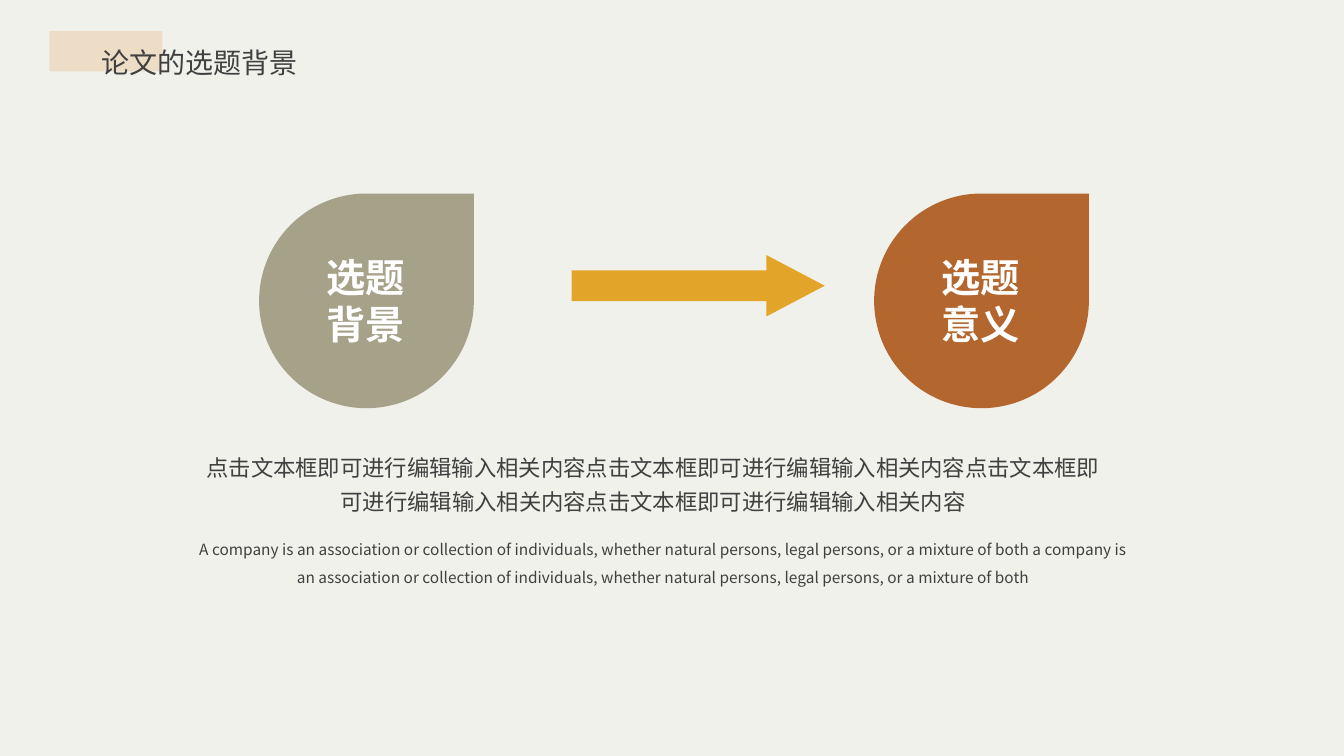
from lxml.etree import SubElement
from pptx import Presentation
from pptx.dml.color import RGBColor
from pptx.enum.shapes import MSO_SHAPE as Shape
from pptx.enum.text import MSO_ANCHOR as Anchor, PP_ALIGN as Align
from pptx.oxml.ns import qn
from pptx.util import Inches, Pt

TITLE = "论文的选题背景"
# lines, left edge, fill colour, opacity in percent
DROPS = [
    (["选题", "背景"], 2.57, "olive", 85),
    (["选题", "意义"], 8.67, "rust", 100),
]
CHINESE = "点击文本框即可进行编辑输入相关内容" * 4
PHRASE = ("company is an association or collection of individuals, "
          "whether natural persons, legal persons, or a mixture of both")
ENGLISH = f"A {PHRASE} a {PHRASE}"

THEME = {
    "font": "Noto Sans CJK SC",
    "colors": {
        "paper": "F1F1EB", "sand": "EDDDC6", "olive": "9A9479", "rust": "B3672E",
        "gold": "E2A52A", "ink": "404040", "white": "FFFFFF",
    },
    "sizes": {"title": 20, "drop": 28, "body": 16, "small": 11},
}
DROP_TOP, DROP_SIZE = 1.92, 2.13
LABEL_WIDTH, LABEL_HEIGHT = 0.99, 1.04


def color(name):
    return RGBColor.from_string(THEME["colors"][name])


def add_figure(page, kind, left, top, width, height, fill, opacity=100):
    figure = page.shapes.add_shape(
        kind, Inches(left), Inches(top), Inches(width), Inches(height))
    figure.shadow.inherit = False
    figure.line.fill.background()
    figure.fill.solid()
    figure.fill.fore_color.rgb = color(fill)
    if opacity < 100:
        tint = figure.fill._xPr.find(f".//{qn('a:srgbClr')}")
        SubElement(tint, qn("a:alpha"), val=str(opacity * 1000))
    return figure


def add_text(page, lines, left, top, width, height, size, ink="ink", bold=False,
             align=Align.LEFT, spacing=1.0, wrap=True, inset=None):
    box = page.shapes.add_textbox(
        Inches(left), Inches(top), Inches(width), Inches(height))
    frame = box.text_frame
    frame.word_wrap = wrap
    frame.vertical_anchor = Anchor.TOP
    if inset is not None:
        frame.margin_left = frame.margin_right = Inches(inset)
        frame.margin_top = frame.margin_bottom = Inches(inset)
    for index, line in enumerate(lines):
        para = frame.add_paragraph() if index else frame.paragraphs[0]
        para.alignment = align
        para.line_spacing = spacing
        span = para.add_run()
        span.text = line
        span.font.name = THEME["font"]
        span.font.size = Pt(THEME["sizes"][size])
        span.font.bold = bold
        span.font.color.rgb = color(ink)
        SubElement(span.font._element, qn("a:ea"), typeface=THEME["font"])
    return box


def main():
    deck = Presentation()
    deck.slide_width, deck.slide_height = Inches(13.33), Inches(7.5)
    page = deck.slides.add_slide(deck.slide_layouts[6])
    page.background.fill.solid()
    page.background.fill.fore_color.rgb = color("paper")

    add_figure(page, Shape.RECTANGLE, 0.49, 0.31, 1.12, 0.4, "sand")
    add_text(page, [TITLE], 0.91, 0.24, 3.5, 0.55, "title",
             align=Align.JUSTIFY, spacing=1.5)

    for lines, left, fill, opacity in DROPS:
        add_figure(page, Shape.TEAR, left, DROP_TOP, DROP_SIZE, DROP_SIZE,
                   fill, opacity)
        add_text(page, lines, left + (DROP_SIZE - LABEL_WIDTH) / 2,
                 DROP_TOP + (DROP_SIZE - LABEL_HEIGHT) / 2,
                 LABEL_WIDTH, LABEL_HEIGHT, "drop", ink="white", bold=True,
                 wrap=False)

    arrow = add_figure(page, Shape.RIGHT_ARROW, 5.67, 2.53, 2.51, 0.61, "gold")
    arrow.adjustments[1] = 0.95

    add_text(page, [CHINESE], 1.84, 4.39, 9.28, 0.77, "body",
             align=Align.CENTER, spacing=1.25)
    add_text(page, [ENGLISH], 1.94, 5.27, 9.28, 0.58, "small",
             align=Align.CENTER, spacing=1.5, inset=0)
    deck.save("out.pptx")


if __name__ == "__main__":
    main()
